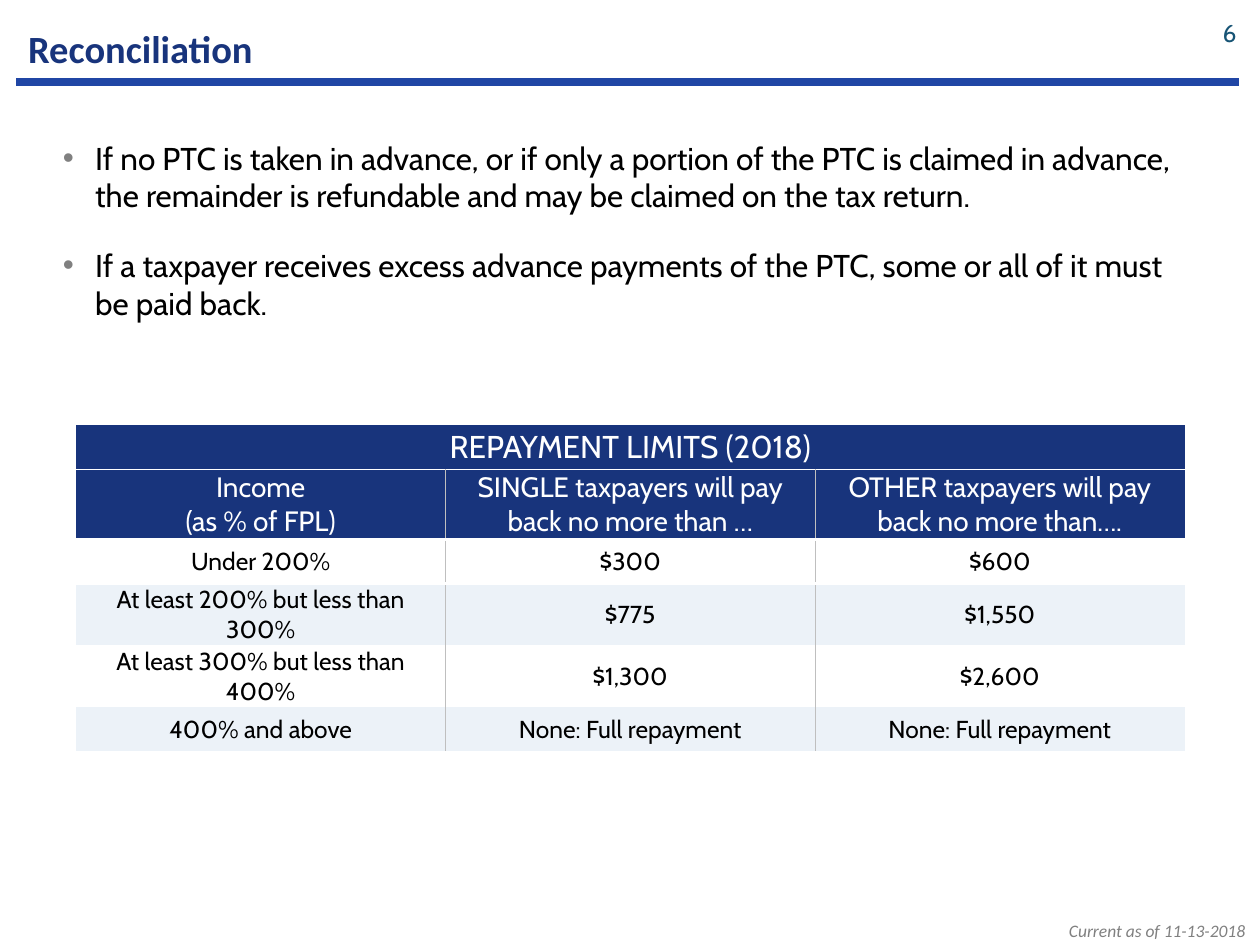
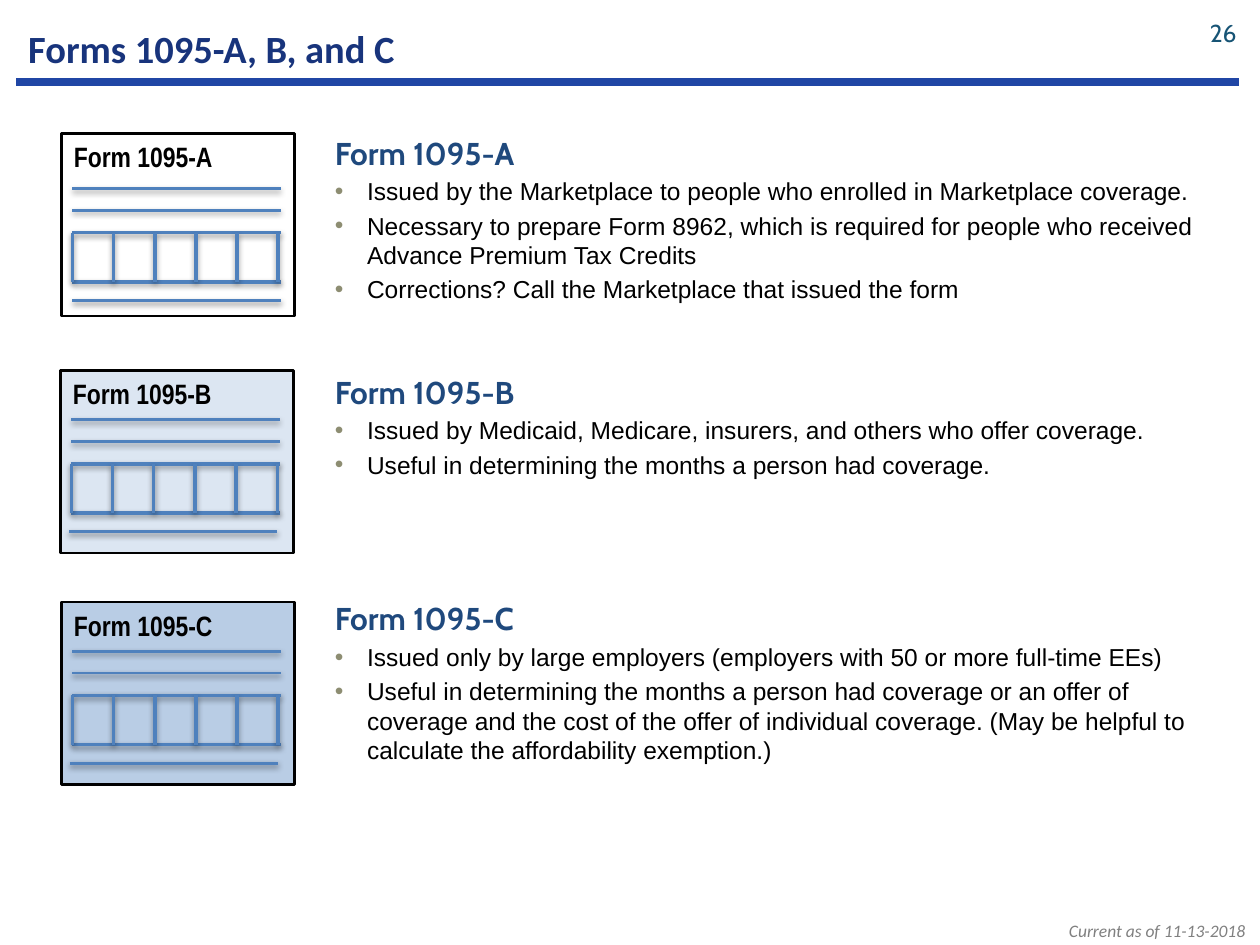
from lxml.etree import SubElement
from pptx import Presentation
from pptx.dml.color import RGBColor
from pptx.enum.shapes import MSO_CONNECTOR, MSO_SHAPE
from pptx.enum.text import MSO_ANCHOR, PP_ALIGN
from pptx.oxml import parse_xml
from pptx.oxml.ns import nsdecls, qn
from pptx.util import Cm, Pt

NAVY = RGBColor(0x18, 0x34, 0x7C)
RULE_BLUE = RGBColor(0x20, 0x46, 0xA5)
NUMBER_TEAL = RGBColor(0x17, 0x54, 0x75)
HEADING_BLUE = RGBColor(0x1F, 0x49, 0x7D)
FORM_LINE_BLUE = RGBColor(0x4F, 0x81, 0xBD)
FORM_B_FILL = RGBColor(0xDC, 0xE6, 0xF2)
FORM_C_FILL = RGBColor(0xB9, 0xCD, 0xE5)
ROW_TINT = RGBColor(0xEC, 0xF2, 0xF8)
GREY = RGBColor(0x80, 0x80, 0x80)
BULLET_OLIVE = RGBColor(0x8D, 0x8D, 0x72)
BORDER_GREY = RGBColor(0xBF, 0xBF, 0xBF)
BLACK = RGBColor(0, 0, 0)
WHITE = RGBColor(0xFF, 0xFF, 0xFF)

NO_TABLE_STYLE = "{2D5ABB26-0587-4C30-8999-92F81FD0307C}"
SOFT_SHADOW = (
    f'<a:effectLst {nsdecls("a")}><a:outerShdw blurRad="40000" dist="20000" dir="5400000" '
    'rotWithShape="0"><a:srgbClr val="000000"><a:alpha val="38000"/></a:srgbClr>'
    '</a:outerShdw></a:effectLst>'
)
NO_SHADOW = f'<a:effectLst {nsdecls("a")}/>'


# Shared helpers
def add_run(paragraph, text, font, size, color, bold=False, italic=False):
    run = paragraph.add_run()
    run.text = text
    run.font.name, run.font.size = font, Pt(size)
    run.font.bold, run.font.italic = bold, italic
    run.font.color.rgb = color


def add_text_box(slide, box, anchor=MSO_ANCHOR.TOP):
    frame = slide.shapes.add_textbox(*map(Cm, box)).text_frame
    frame.word_wrap = True
    frame.vertical_anchor = anchor
    return frame


def add_line(shapes, start, end, color, width, effect=NO_SHADOW):
    line = shapes.add_connector(MSO_CONNECTOR.STRAIGHT, *map(Cm, (*start, *end)))
    line.line.color.rgb = color
    line.line.width = Pt(width)
    line._element.spPr.append(parse_xml(effect))


def set_bullet(paragraph, color):
    properties = paragraph._p.get_or_add_pPr()
    properties.set("marL", str(Cm(0.65)))
    properties.set("indent", str(-Cm(0.65)))
    bullet_color = SubElement(properties, qn("a:buClr"))
    SubElement(bullet_color, qn("a:srgbClr"), val=str(color))
    SubElement(properties, qn("a:buFont"), typeface="Arial")
    SubElement(properties, qn("a:buChar"), char="•")


def add_titled_slide(presentation, title, number):
    slide = presentation.slides.add_slide(presentation.slide_layouts[6])
    # Date note
    paragraph = add_text_box(slide, (15.16, 18.42, 10.19, 0.68)).paragraphs[0]
    paragraph.alignment = PP_ALIGN.RIGHT
    add_run(paragraph, "Current as of 11-13-2018", "Calibri", 10, GREY, italic=True)
    # Title over its rule
    add_line(slide.shapes, (0.33, 1.65), (24.97, 1.65), RULE_BLUE, 4.75)
    frame = add_text_box(slide, (0.32, 0.25, 23, 1.45), MSO_ANCHOR.MIDDLE)
    add_run(frame.paragraphs[0], title, "Calibri", 22, NAVY, bold=True)
    # Slide number
    frame = add_text_box(slide, (23.88, 0.15, 1.3, 1.02), MSO_ANCHOR.MIDDLE)
    frame.paragraphs[0].alignment = PP_ALIGN.RIGHT
    add_run(frame.paragraphs[0], number, "Cabin", 14, NUMBER_TEAL)
    return slide


# Reconciliation slide
def add_key_points(slide, box, points):
    frame = add_text_box(slide, box)
    for index, point in enumerate(points):
        paragraph = frame.add_paragraph() if index else frame.paragraphs[0]
        set_bullet(paragraph, GREY)
        if index:
            paragraph.space_before = Pt(18)
        add_run(paragraph, point, "Cabin", 18, BLACK)


def set_border(cell, side, color, width):
    cell._tc.get_or_add_tcPr().append(parse_xml(
        f'<a:{side} {nsdecls("a")} w="{Pt(width)}"><a:solidFill>'
        f'<a:srgbClr val="{color}"/></a:solidFill></a:{side}>'))


def fill_cell(cell, text, size, color, fill):
    cell.vertical_anchor = MSO_ANCHOR.MIDDLE
    cell.margin_left = cell.margin_right = Cm(0.08)
    cell.margin_top = cell.margin_bottom = Cm(0.03)
    for index, line in enumerate(text.split("\n")):
        paragraph = cell.text_frame.add_paragraph() if index else cell.text_frame.paragraphs[0]
        paragraph.alignment = PP_ALIGN.CENTER
        add_run(paragraph, line, "Cabin", size, color)
    cell.fill.solid()
    cell.fill.fore_color.rgb = fill


def add_limits_table(slide, box, title, rows):
    columns = len(rows[0])
    table = slide.shapes.add_table(len(rows) + 1, columns, *map(Cm, box)).table
    table.first_row = table.horz_banding = False
    table._tbl.tblPr.find(qn("a:tableStyleId")).text = NO_TABLE_STYLE
    for column in table.columns:
        column.width = Cm(box[2] / columns)
    for index, row in enumerate(table.rows):
        row.height = Cm(1.22 if index == 1 else 0.89)

    # Title row
    title_cell = table.cell(0, 0)
    title_cell.merge(table.cell(0, columns - 1))
    set_border(title_cell, "lnB", WHITE, 0.5)
    fill_cell(title_cell, title, 18, WHITE, NAVY)
    title_cell.margin_top = title_cell.margin_bottom = 0

    # Column headings, then banded rows
    for row_index, texts in enumerate(rows, 1):
        heading = row_index == 1
        for column_index, text in enumerate(texts):
            cell = table.cell(row_index, column_index)
            if column_index:
                set_border(cell, "lnL", BORDER_GREY, 0.5)
            if column_index < columns - 1:
                set_border(cell, "lnR", BORDER_GREY, 0.5)
            if heading:
                set_border(cell, "lnT", WHITE, 0.5)
                set_border(cell, "lnB", WHITE, 1.5)
                fill_cell(cell, text, 16, WHITE, NAVY)
            else:
                if row_index == 2:
                    set_border(cell, "lnT", WHITE, 1.5)
                fill_cell(cell, text, 14, BLACK, ROW_TINT if row_index % 2 else WHITE)


def build_reconciliation(presentation):
    slide = add_titled_slide(presentation, "Reconciliation", "6")
    add_key_points(slide, (1.02, 2.67, 22.86, 13.51), [
        "If no PTC is taken in advance, or if only a portion of the PTC is claimed in advance, "
        "the remainder is refundable and may be claimed on the tax return.",
        "If a taxpayer receives excess advance payments of the PTC, some or all of it must "
        "be paid back.",
    ])
    add_limits_table(slide, (1.53, 8.57, 22.35, 5.67), "REPAYMENT LIMITS (2018)", [
        ("Income\n(as % of FPL)", "SINGLE taxpayers will pay back no more than …",
         "OTHER taxpayers will pay back no more than…."),
        ("Under 200%", "$300", "$600"),
        ("At least 200% but less than 300%", "$775", "$1,550"),
        ("At least 300% but less than 400%", "$1,300", "$2,600"),
        ("400% and above", "None: Full repayment", "None: Full repayment"),
    ])


# Forms slide
def add_form_card(slide, box, name, fill, lines_top, last_line_shift):
    left, top = box[:2]
    shapes = slide.shapes.add_group_shape().shapes
    card = shapes.add_shape(MSO_SHAPE.RECTANGLE, *map(Cm, box))
    card.shadow.inherit = False
    card.line.color.rgb = BLACK
    card.line.width = Pt(1.5)
    if fill is None:
        card.fill.background()
    else:
        card.fill.solid()
        card.fill.fore_color.rgb = fill
    card.text_frame.vertical_anchor = MSO_ANCHOR.TOP
    card.text_frame.word_wrap = True
    paragraph = card.text_frame.paragraphs[0]
    paragraph.alignment = PP_ALIGN.LEFT
    add_run(paragraph, name, "Arial Narrow", 16, BLACK, bold=True)

    # Two entry lines, the top and bottom of the grid, a closing line
    first_x, first_y = left + 0.22, top + lines_top
    for offset, width, shift in ((0, 1.5, 0), (0.44, 1.5, 0), (0.89, 2, 0), (1.88, 2, 0),
                                 (2.26, 2, last_line_shift)):
        x, y = first_x + shift, first_y + offset
        add_line(shapes, (x, y), (x + 4.2, y), FORM_LINE_BLUE, width, SOFT_SHADOW)
    # Grid columns
    for column in range(6):
        x = first_x + 0.83 * column
        add_line(shapes, (x, first_y + 0.89), (x, first_y + 1.88), FORM_LINE_BLUE, 2, SOFT_SHADOW)


def add_form_notes(slide, box, name, notes):
    frame = add_text_box(slide, box)
    add_run(frame.paragraphs[0], name, "Cabin", 18, HEADING_BLUE, bold=True)
    for note in notes:
        paragraph = frame.add_paragraph()
        set_bullet(paragraph, BULLET_OLIVE)
        paragraph.space_before = Pt(2.8)
        add_run(paragraph, note, "Arial", 14, BLACK)


def build_forms(presentation):
    slide = add_titled_slide(presentation, "Forms 1095-A, B, and C", "26")
    forms = [
        ("Form 1095-A", None, (1.24, 2.69), 1.11, 0, (2.57, 3.78), [
            "Issued by the Marketplace to people who enrolled in Marketplace coverage.",
            "Necessary to prepare Form 8962, which is required for people who received "
            "Advance Premium Tax Credits",
            "Corrections? Call the Marketplace that issued the form"]),
        ("Form 1095-B", FORM_B_FILL, (1.22, 7.47), 0.99, -0.05, (7.39, 2.46), [
            "Issued by Medicaid, Medicare, insurers, and others who offer coverage.",
            "Useful in determining the months a person had coverage."]),
        ("Form 1095-C", FORM_C_FILL, (1.24, 12.14), 0.99, -0.05, (11.96, 3.66), [
            "Issued only by large employers (employers with 50 or more full-time EEs)",
            "Useful in determining the months a person had coverage or an offer of coverage "
            "and the cost of the offer of individual coverage. (May be helpful to calculate "
            "the affordability exemption.)"]),
    ]
    for name, fill, corner, lines_top, last_line_shift, (notes_top, notes_height), notes in forms:
        add_form_card(slide, (*corner, 4.7, 3.68), name, fill, lines_top, last_line_shift)
        add_form_notes(slide, (6.5, notes_top, 18.06, notes_height), name, notes)


def main():
    presentation = Presentation()
    presentation.slide_width, presentation.slide_height = Cm(25.4), Cm(19.05)
    build_reconciliation(presentation)
    build_forms(presentation)
    presentation.save("out.pptx")


if __name__ == "__main__":
    main()
